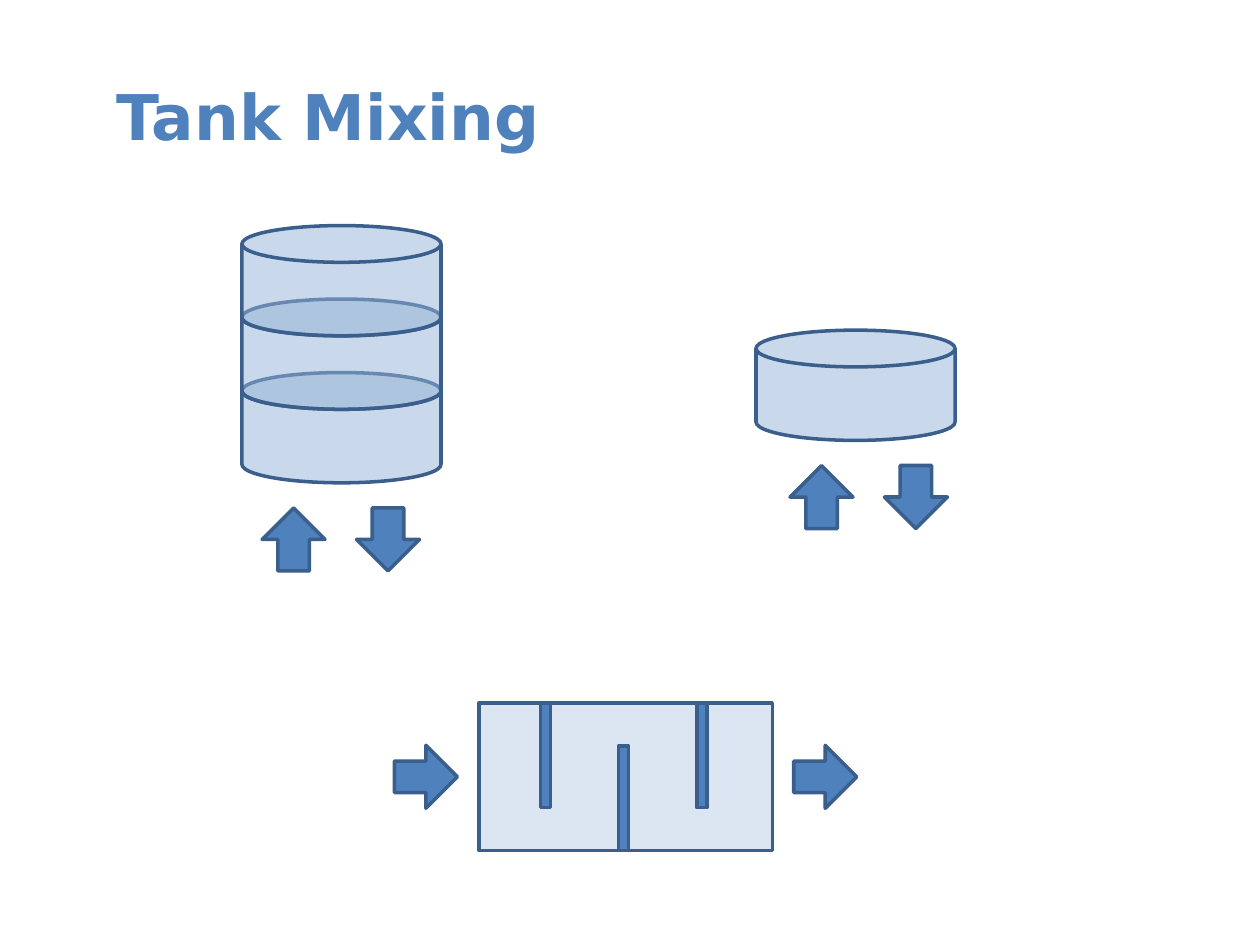
from lxml.etree import SubElement
from pptx import Presentation
from pptx.dml.color import RGBColor
from pptx.enum.shapes import MSO_SHAPE as Shape
from pptx.enum.text import MSO_ANCHOR as Anchor
from pptx.oxml.ns import qn
from pptx.util import Inches, Pt

BLUE = RGBColor(0x4F, 0x81, 0xBD)
OUTLINE = RGBColor(0x3A, 0x5F, 0x8C)
LIQUID = RGBColor(0x95, 0xB3, 0xD7)
BASIN = RGBColor(0xDC, 0xE6, 0xF2)

DISK_WIDTH, DISK_HEIGHT = 1.58, 0.875
DISK_STEP = DISK_HEIGHT * 2 / 3
ARROW_SIZE = 0.5
ARROW_STEP = 0.75
BAFFLE_WIDTH, BAFFLE_HEIGHT = 0.08, 0.83
DOWN, UP, RIGHT = 0, 180, 270


def add_part(shapes, kind, left, top, width, height, color=BLUE):
    part = shapes.add_shape(kind, Inches(left), Inches(top), Inches(width), Inches(height))
    part.shadow.inherit = False
    part.fill.solid()
    part.fill.fore_color.rgb = color
    part.line.color.rgb = OUTLINE
    part.line.width = Pt(2)
    return part


def add_arrow(shapes, left, top, direction):
    arrow = add_part(shapes, Shape.DOWN_ARROW, left, top, ARROW_SIZE, ARROW_SIZE)
    arrow.rotation = direction


def add_disk(shapes, left, top):
    disk = add_part(shapes, Shape.FLOWCHART_MAGNETIC_DISK, left, top,
                    DISK_WIDTH, DISK_HEIGHT, LIQUID)
    color = disk.fill._xPr.find(qn("a:solidFill"))[0]
    SubElement(color, qn("a:alpha"), val="50000")


def add_title(page, left, top, width, height):
    box = page.shapes.add_textbox(Inches(left), Inches(top), Inches(width), Inches(height))
    frame = box.text_frame
    frame.word_wrap = True
    frame.vertical_anchor = Anchor.MIDDLE
    para = frame.paragraphs[0]
    para.text = "Tank Mixing"
    para.font.name = "DejaVu Sans"
    para.font.size = Pt(36)
    para.font.bold = True
    para.font.color.rgb = BLUE


def add_tank(page, left, top, layers, arrow_inset):
    shapes = page.shapes.add_group_shape().shapes
    bottom = top + (layers - 1) * DISK_STEP + DISK_HEIGHT
    for column, direction in enumerate((UP, DOWN)):
        add_arrow(shapes, left + arrow_inset + column * ARROW_STEP, bottom + 0.2, direction)
    for layer in reversed(range(layers)):
        add_disk(shapes, left, top + layer * DISK_STEP)


def add_baffled_basin(page, left, top, width, height):
    shapes = page.shapes.add_group_shape().shapes
    add_part(shapes, Shape.RECTANGLE, left, top, width, height, BASIN)
    arrow_top = top + (height - ARROW_SIZE) / 2
    for arrow_left in (left - 0.67, left + width + 0.17):
        add_arrow(shapes, arrow_left, arrow_top, RIGHT)
    low = top + height - BAFFLE_HEIGHT
    for column, baffle_top in enumerate((top, low, top)):
        add_part(page.shapes, Shape.RECTANGLE, left + 0.49 + column * 0.62, baffle_top,
                 BAFFLE_WIDTH, BAFFLE_HEIGHT)


def main():
    deck = Presentation()
    deck.slide_width, deck.slide_height = Inches(10), Inches(7.5)
    page = deck.slides.add_slide(deck.slide_layouts[6])
    add_title(page, 0.83, 0.29, 8.83, 1.25)
    add_tank(page, 1.92, 1.79, layers=3, arrow_inset=0.16)
    add_tank(page, 6, 2.62, layers=1, arrow_inset=0.27)
    add_baffled_basin(page, 3.8, 5.58, 2.33, 1.17)
    deck.save("out.pptx")


if __name__ == "__main__":
    main()
